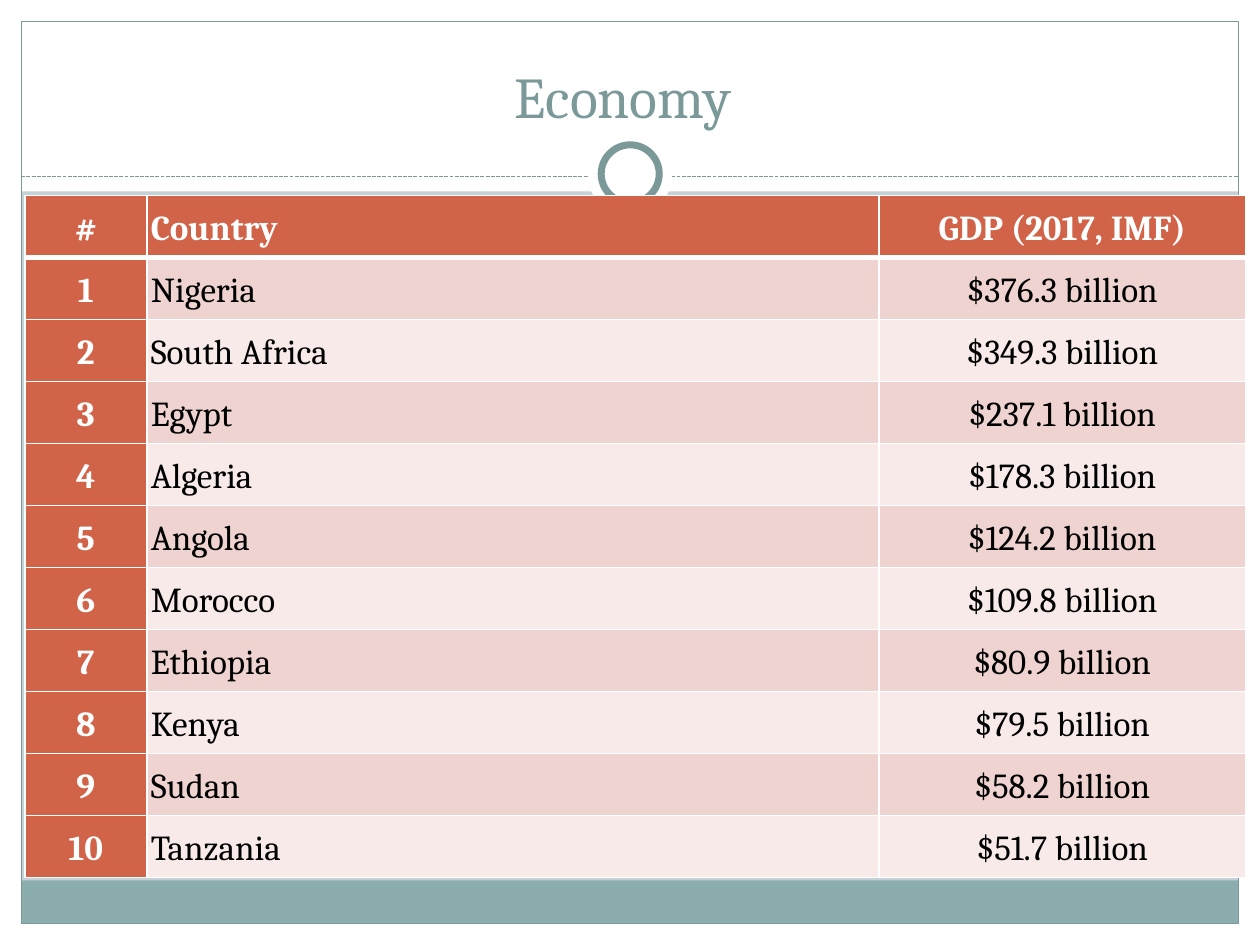
"""Build the Economy slide: a ranking of African countries by GDP."""
from lxml import etree
from pptx import Presentation
from pptx.dml.color import RGBColor
from pptx.enum.dml import MSO_LINE
from pptx.enum.shapes import MSO_CONNECTOR, MSO_SHAPE
from pptx.enum.text import MSO_ANCHOR, PP_ALIGN
from pptx.oxml.ns import qn
from pptx.util import Cm, Pt

RECT, OVAL = MSO_SHAPE.RECTANGLE, MSO_SHAPE.OVAL
STRAIGHT, DASH = MSO_CONNECTOR.STRAIGHT, MSO_LINE.SQUARE_DOT
LEFT, CENTER = PP_ALIGN.LEFT, PP_ALIGN.CENTER
MIDDLE, BOTTOM = MSO_ANCHOR.MIDDLE, MSO_ANCHOR.BOTTOM

WHITE = RGBColor(0xFF, 0xFF, 0xFF)
BLACK = RGBColor(0x00, 0x00, 0x00)
BACKGROUND = RGBColor(0xC5, 0xD1, 0xD7)
TEAL = RGBColor(0x7C, 0x99, 0x9A)
FOOTER = RGBColor(0x8C, 0xAD, 0xAE)
RUST = RGBColor(0xD1, 0x63, 0x49)
BANDS = (RGBColor(0xF7, 0xEA, 0xE9), RGBColor(0xEE, 0xD3, 0xD0))

FONT = "Cambria"
WIDTH, HEIGHT, MARGIN = 25.4, 19.05, 0.43
COLUMN_WIDTHS = (2.46, 14.76, 7.39)
ROW_HEIGHT = 1.25
ALIGNMENTS = (CENTER, LEFT, CENTER)
HEADINGS = ("#", "Country", "GDP (2017, IMF)")
GDP = (
    ("Nigeria", "$376.3 billion"),
    ("South Africa", "$349.3 billion"),
    ("Egypt", "$237.1 billion"),
    ("Algeria", "$178.3 billion"),
    ("Angola", "$124.2 billion"),
    ("Morocco", "$109.8 billion"),
    ("Ethiopia", "$80.9 billion"),
    ("Kenya", "$79.5 billion"),
    ("Sudan", "$58.2 billion"),
    ("Tanzania", "$51.7 billion"),
)


def add_block(s, kind, box, fill=None, line=None, weight=0.75):
    """Add a preset shape with an optional fill and outline."""
    sp = s.shapes.add_shape(kind, *map(Cm, box))
    sp.shadow.inherit = False
    if fill is None:
        sp.fill.background()
    else:
        sp.fill.solid()
        sp.fill.fore_color.rgb = fill
    if line is None:
        sp.line.fill.background()
    else:
        sp.line.color.rgb = line
        sp.line.width = Pt(weight)


def add_dashed_rule(s, y):
    """Add the dashed horizontal rule under the title."""
    rule = s.shapes.add_connector(STRAIGHT, Cm(MARGIN), Cm(y), Cm(WIDTH - MARGIN), Cm(y))
    rule.line.color.rgb = TEAL
    rule.line.width = Pt(0.75)
    rule.line.dash_style = DASH
    etree.SubElement(rule._element.spPr, qn("a:effectLst"))


def add_frame(s):
    """Add the white margins, footer band, border and ring."""
    for box in (
        (0, HEIGHT - MARGIN, WIDTH, MARGIN),
        (0, 0, WIDTH, 3.86),
        (0, 0, MARGIN, HEIGHT),
        (WIDTH - MARGIN, 0, MARGIN, HEIGHT),
    ):
        add_block(s, RECT, box, WHITE)
    inner = WIDTH - 2 * MARGIN
    add_block(s, RECT, (MARGIN, 17.75, inner, 0.87), FOOTER)
    add_block(s, RECT, (MARGIN, MARGIN, inner, HEIGHT - 2 * MARGIN), line=TEAL)
    add_dashed_rule(s, 3.56)
    add_block(s, OVAL, (11.85, 2.67, 1.7, 1.7), WHITE)
    add_block(s, OVAL, (12.12, 2.92, 1.17, 1.17), WHITE, TEAL, 4)


def style_text(p, size, color, align, bold=False):
    """Set alignment and font of a paragraph and its runs."""
    p.alignment = align
    for r in p.runs:
        r.font.name = FONT
        r.font.size = Pt(size)
        r.font.bold = bold
        r.font.color.rgb = color


def add_title(s, text):
    """Add the slide title, standing on the bottom of its box."""
    tf = s.shapes.add_textbox(Cm(0.84), Cm(0.64), Cm(23.7), Cm(2.11)).text_frame
    tf.word_wrap = True
    tf.vertical_anchor = BOTTOM
    tf.text = text
    style_text(tf.paragraphs[0], 33, TEAL, CENTER)


def set_borders(cell, bottom):
    """Draw white cell borders, with the given bottom weight in points."""
    tc_pr = cell._tc.get_or_add_tcPr()
    weights = {"a:lnL": 1, "a:lnR": 1, "a:lnT": 1, "a:lnB": bottom}
    for i, (tag, weight) in enumerate(weights.items()):
        ln = etree.Element(qn(tag), w=str(Pt(weight)))
        fill = etree.SubElement(ln, qn("a:solidFill"))
        etree.SubElement(fill, qn("a:srgbClr"), val=str(WHITE))
        tc_pr.insert(i, ln)


def fill_cell(cell, text, row, col):
    """Write and style one table cell by its row and column."""
    strong = row == 0 or col == 0
    cell.fill.solid()
    cell.fill.fore_color.rgb = RUST if strong else BANDS[row % 2]
    cell.margin_left = cell.margin_right = Cm(0.08)
    cell.margin_top = cell.margin_bottom = Cm(0.08)
    cell.vertical_anchor = MIDDLE
    cell.text_frame.text = text
    p = cell.text_frame.paragraphs[0]
    p.line_spacing = 1.15
    style_text(p, 20, WHITE if strong else BLACK, ALIGNMENTS[col], strong)
    set_borders(cell, 3 if row <= 0 else 1)


def add_gdp_table(s):
    """Add the ranked GDP table."""
    rows = [HEADINGS] + [(str(i), *entry) for i, entry in enumerate(GDP, 1)]
    table = s.shapes.add_table(
        len(rows), len(HEADINGS), Cm(0.5), Cm(3.94),
        Cm(sum(COLUMN_WIDTHS)), Cm(ROW_HEIGHT * len(rows)),
    ).table
    table.first_col = True
    for column, width in zip(table.columns, COLUMN_WIDTHS):
        column.width = Cm(width)
    for i, values in enumerate(rows):
        table.rows[i].height = Cm(ROW_HEIGHT)
        for j, text in enumerate(values):
            fill_cell(table.cell(i, j), text, i, j)


def main():
    """Build and save the slide."""
    prs = Presentation()
    prs.slide_width, prs.slide_height = Cm(WIDTH), Cm(HEIGHT)
    s = prs.slides.add_slide(prs.slide_layouts[6])
    s.background.fill.solid()
    s.background.fill.fore_color.rgb = BACKGROUND
    add_frame(s)
    add_title(s, "Economy ")
    add_gdp_table(s)
    prs.save("out.pptx")


if __name__ == "__main__":
    main()
